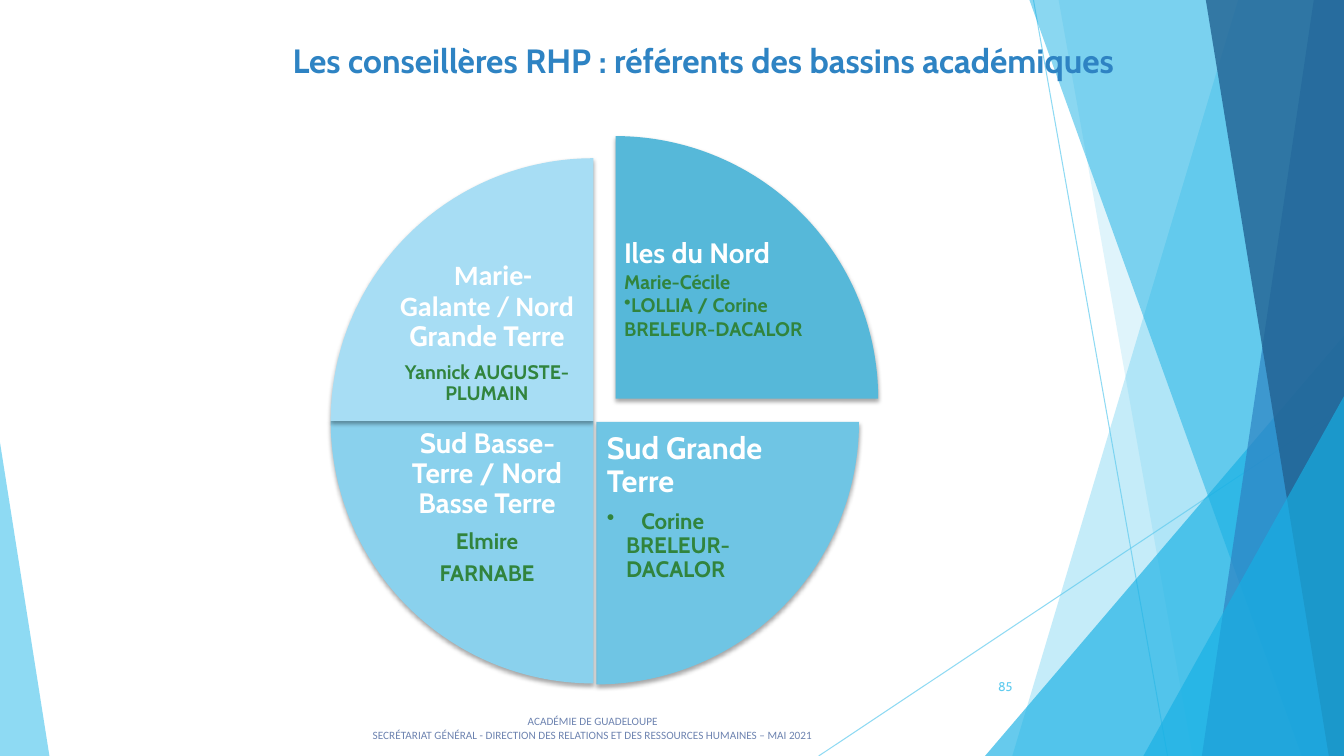
from dataclasses import dataclass
from typing import Any

import pptx
import pptx.dml.color
import pptx.enum.shapes
import pptx.enum.text
import pptx.oxml.ns
import pptx.oxml.xmlchemy
import pptx.util
from lxml import etree

Inches = pptx.util.Inches
Pt = pptx.util.Pt
RGBColor = pptx.dml.color.RGBColor
Shape = pptx.enum.shapes.MSO_SHAPE
Align = pptx.enum.text.PP_ALIGN
Anchor = pptx.enum.text.MSO_ANCHOR
qn = pptx.oxml.ns.qn

SKY = RGBColor(0x5F, 0xCB, 0xEF)
CYAN = RGBColor(0x17, 0xB0, 0xE4)
BLUE = RGBColor(0x2E, 0x83, 0xC3)
NAVY = RGBColor(0x22, 0x62, 0x92)
GREEN = RGBColor(0x31, 0x84, 0x3D)
WHITE = RGBColor(0xFF, 0xFF, 0xFF)
SLATE = RGBColor(0x6D, 0x83, 0xB0)
EAST = RGBColor(0x56, 0xB8, 0xD9)
SOUTH = RGBColor(0x6F, 0xC5, 0xE4)
WEST = RGBColor(0x8A, 0xD1, 0xED)
NORTH = RGBColor(0xA7, 0xDD, 0xF4)

WIDE, HIGH = 13.33, 7.5
DISC = 5.21


@dataclass
class Band:
    points: list[tuple[float, float]]
    color: RGBColor
    alpha: int


@dataclass
class Wedge:
    left: float
    top: float
    angles: tuple[int, int]
    color: RGBColor


@dataclass
class Run:
    text: str
    size: float
    color: RGBColor = GREEN
    face: str = "Cabin"
    bold: bool = True


@dataclass
class Para:
    runs: list[Run]
    align: Any = None
    tight: bool = False
    after: float = 0
    margin: float = 0
    indent: float = 0
    bullet: bool = False
    tab: float = 0


@dataclass
class Label:
    left: float
    top: float
    paras: list[Para]
    width: float = 1.92
    height: float = 1.55
    inset: float = 0.03
    anchor: Any = Anchor.TOP


def fade(shape: Any, alpha: int) -> None:
    for color in shape.element.xpath(".//p:spPr//a:srgbClr"):
        etree.SubElement(color, qn("a:alpha"), val=str(alpha * 1000))


def paint(shape: Any, color: RGBColor, alpha: int = 100) -> None:
    shape.shadow.inherit = False
    shape.fill.solid()
    shape.fill.fore_color.rgb = color
    shape.line.fill.background()
    if alpha < 100:
        fade(shape, alpha)


def rule(shapes: Any, start: tuple[float, float], end: tuple[float, float]) -> None:
    line = shapes.add_connector(pptx.enum.shapes.MSO_CONNECTOR.STRAIGHT,
                                *map(Inches, start + end))
    line.line.color.rgb = SKY
    line.line.width = Pt(0.75)
    etree.SubElement(line.element.spPr, qn("a:effectLst"))
    fade(line, 70)


def band(shapes: Any, item: Band) -> None:
    spots = [(Inches(x), Inches(y)) for x, y in item.points]
    form = shapes.build_freeform(*spots[0], scale=1.0)
    form.add_line_segments(spots[1:], close=True)
    paint(form.convert_to_shape(), item.color, item.alpha)


def wedge(shapes: Any, item: Wedge) -> None:
    pie = shapes.add_shape(Shape.PIE, Inches(item.left), Inches(item.top),
                           Inches(DISC), Inches(DISC))
    pie.adjustments[0], pie.adjustments[1] = item.angles
    paint(pie, item.color)
    glow = etree.SubElement(pie.element.spPr.find(qn("a:effectLst")), qn("a:outerShdw"),
                            blurRad=str(Pt(3)), dist=str(Pt(2)), dir="5400000", rotWithShape="0")
    black = etree.SubElement(glow, qn("a:srgbClr"), val="000000")
    etree.SubElement(black, qn("a:alpha"), val="35000")


def write(line: Any, text: str, *, size: float, color: RGBColor, face: str, bold: bool) -> None:
    run = line.add_run()
    run.text = text
    run.font.size = Pt(size)
    run.font.color.rgb = color
    run.font.name = face
    run.font.bold = bold


def fill(frame: Any, paras: list[Para]) -> None:
    for i, para in enumerate(paras):
        line = frame.paragraphs[0] if i == 0 else frame.add_paragraph()
        line.alignment = para.align
        if para.tight:
            line.line_spacing = 0.9
        line.space_after = Pt(para.after)
        props = line._p.get_or_add_pPr()
        props.set("marL", str(Inches(para.margin)))
        props.set("indent", str(Inches(para.indent)))
        if para.bullet:
            etree.SubElement(props, qn("a:buChar"), char="•")
        if para.tab:
            stops = etree.SubElement(props, qn("a:tabLst"))
            etree.SubElement(stops, qn("a:tab"), pos=str(Inches(para.tab)), algn="l")
        for run in para.runs:
            write(line, run.text, size=run.size, color=run.color, face=run.face, bold=run.bold)


def label(shapes: Any, item: Label) -> None:
    box = shapes.add_textbox(Inches(item.left), Inches(item.top),
                             Inches(item.width), Inches(item.height))
    frame = box.text_frame
    frame.word_wrap = True
    frame.vertical_anchor = item.anchor
    frame.margin_left = frame.margin_right = Inches(item.inset)
    frame.margin_top = frame.margin_bottom = Inches(min(item.inset, 0.05))
    fill(frame, item.paras)


def mid(*runs: Run, after: float, indent: float = 0) -> Para:
    return Para(list(runs), Align.CENTER, True, after, indent=indent)


def edge(top: float, foot: float) -> list[tuple[float, float]]:
    return [(top, 0), (WIDE, 0), (WIDE, HIGH), (foot, HIGH)]


BANDS = [
    Band(edge(12.28, 10.04), SKY, 36),
    Band(edge(10.5, 11.83), SKY, 20),
    Band([(WIDE, 3.33), (WIDE, HIGH), (9.77, HIGH)], CYAN, 66),
    Band(edge(10.21, 12.91), CYAN, 50),
    Band(edge(13.03, 11.92), BLUE, 70),
    Band(edge(11.96, 13.18), NAVY, 80),
    Band([(WIDE, 3.93), (WIDE, HIGH), (11.34, HIGH)], CYAN, 66),
    Band([(0, 4.39), (0.49, HIGH), (0, HIGH)], SKY, 70),
]
PARTS = [
    (Wedge(3.5, 1.35, (162, 0), EAST), Label(6.16, 2.31, [
        Para([Run("Iles du Nord ", 20, WHITE), Run("Marie-Cécile", 14)]),
        Para([Run("LOLLIA / Corine BRELEUR-DACALOR", 14)], bullet=True)])),
    (Wedge(3.31, 1.58, (0, 54), SOUTH), Label(6, 4.27, [
        Para([Run("Sud Grande Terre", 22, WHITE)], tight=True, after=7.7),
        Para([Run("\tCorine BRELEUR-DACALOR", 16)], tight=True, margin=0.19,
             indent=-0.19, bullet=True, tab=0.34)], inset=0.02)),
    (Wedge(3.28, 1.57, (54, 108), WEST), Label(3.87, 4.26, [
        mid(Run("Sud Basse-Terre / Nord Basse Terre", 20, WHITE), after=7),
        mid(Run("Elmire", 16), after=5.6),
        mid(Run("FARNABE", 16), after=5.6)], anchor=Anchor.MIDDLE)),
    (Wedge(3.28, 1.57, (108, 162), NORTH), Label(3.87, 2.53, [
        mid(Run("Marie-Galante / Nord", 20, WHITE, "Calibri"),
            Run(" Grande Terre", 20, WHITE), after=7, indent=0.12),
        mid(Run("Yannick AUGUSTE-PLUMAIN", 14), after=4.9)], anchor=Anchor.MIDDLE)),
]
FOOT = ["ACADÉMIE DE GUADELOUPE",
        "SECRÉTARIAT GÉNÉRAL - DIRECTION DES RELATIONS ET DES RESSOURCES HUMAINES – MAI 2021"]


def main() -> None:
    deck = pptx.Presentation()
    deck.slide_width, deck.slide_height = Inches(WIDE), Inches(HIGH)
    slide = deck.slides.add_slide(deck.slide_layouts[5])
    shapes = slide.shapes

    # Backdrop
    rule(shapes, (10.25, 0), (11.58, HIGH))
    rule(shapes, (WIDE, 4.03), (8.12, HIGH))
    for item in BANDS:
        band(shapes, item)

    # Title, in front of the backdrop
    title = shapes.title
    title.left, title.top, title.width, title.height = map(Inches, (1.18, 0.35, 11.59, 0.77))
    title.text_frame.vertical_anchor = Anchor.TOP
    title.text_frame.auto_size = pptx.enum.text.MSO_AUTO_SIZE.NONE
    fill(title.text_frame, [Para([Run("Les conseillères RHP : référents des bassins académiques",
                                      24, BLUE)], Align.CENTER)])
    title.element.getparent().append(title.element)

    # Split disc
    for piece, words in PARTS:
        wedge(shapes, piece)
        label(shapes, words)

    # Page number and footer
    label(shapes, Label(9.39, 6.61, [Para([Run("85", 9, SKY, bold=False)], Align.RIGHT)],
                        0.75, 0.4, 0.1, Anchor.MIDDLE))
    label(shapes, Label(3.28, 7.04, [Para([Run(text, 8, SLATE, "Calibri", False)], Align.CENTER)
                                     for text in FOOT], 5.2, 0.52, 0.1))
    deck.save("out.pptx")


if __name__ == "__main__":
    main()
